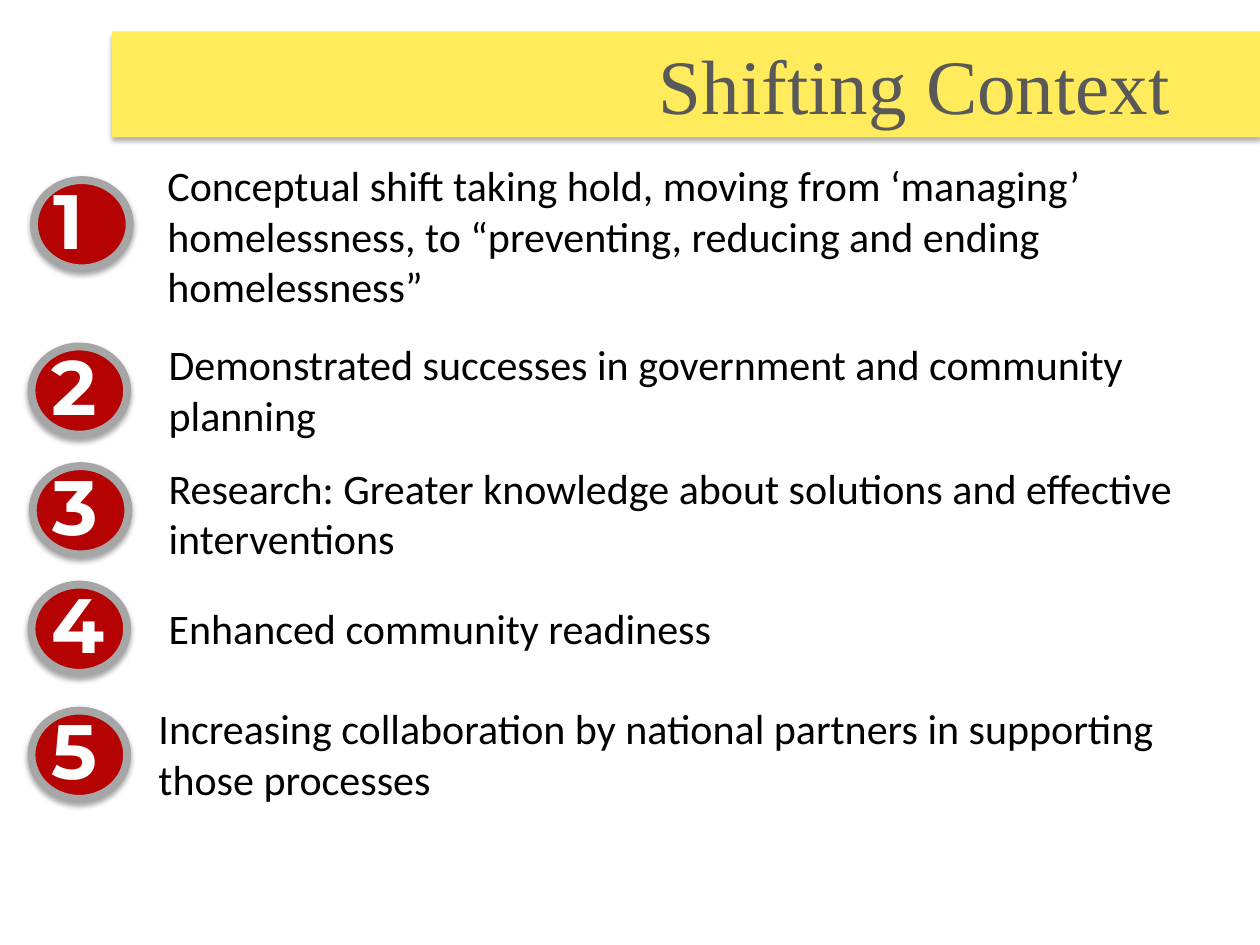
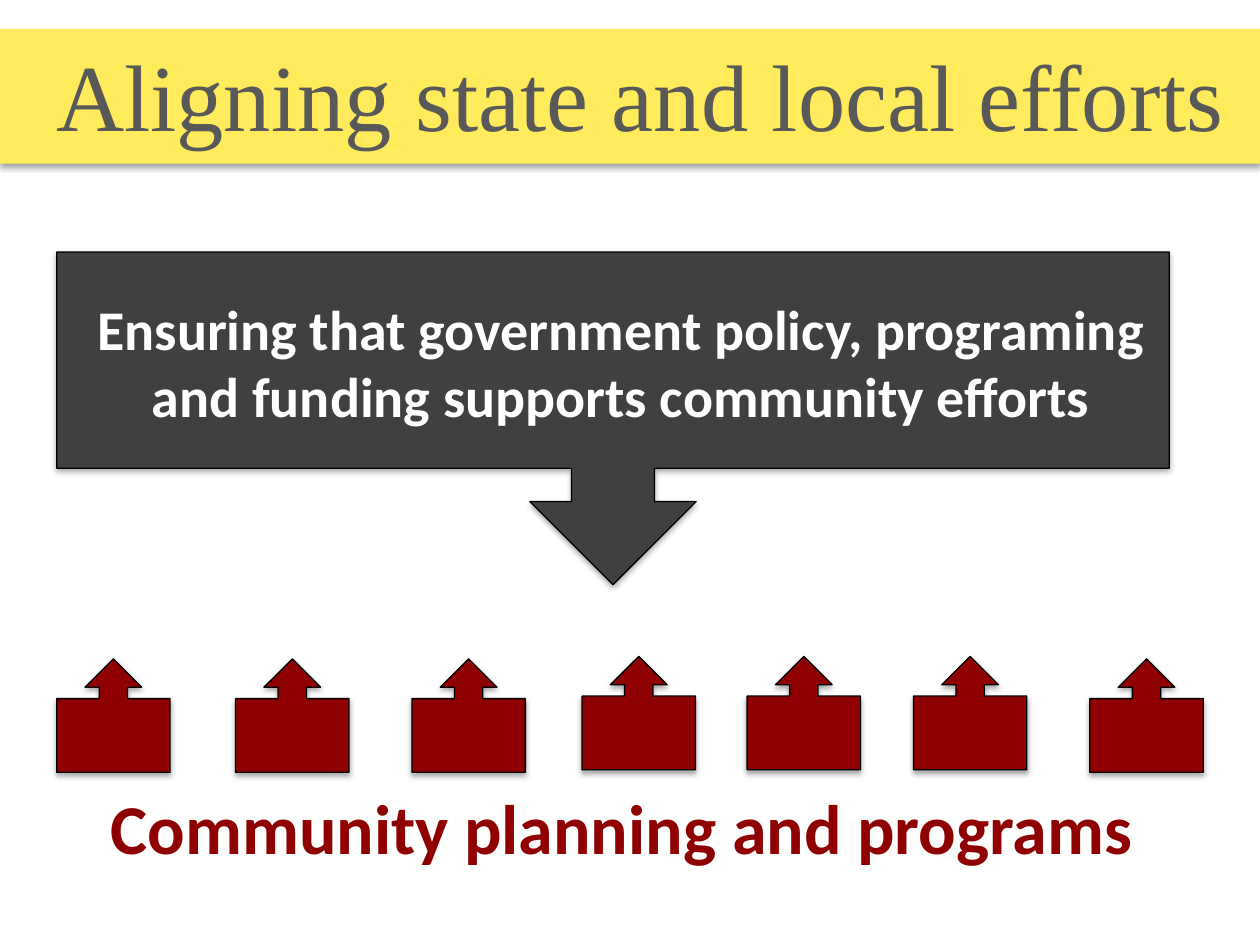
"""Build two slides on homelessness planning: a numbered list and a callout diagram."""
from lxml.etree import SubElement
from pptx import Presentation
from pptx.dml.color import RGBColor
from pptx.enum.shapes import MSO_SHAPE as SHAPE
from pptx.enum.text import MSO_ANCHOR as ANCHOR, MSO_AUTO_SIZE as FIT, PP_ALIGN as ALIGN
from pptx.oxml.ns import qn
from pptx.util import Emu, Inches, Pt

THEME = {
    "band": "FFEB5B", "badge": "B50202", "ring": "A6A6A6", "local": "8F0000",
    "policy": "404040", "outline": "000000",
    "title": {"name": "Times New Roman", "size": 44, "color": "595959", "bold": False},
    "wide_title": {"name": "Times New Roman", "size": 54, "color": "595959", "bold": False},
    "body": {"name": "Calibri", "size": 24, "color": "000000", "bold": False},
    "number": {"name": "Montserrat", "size": 44, "color": "FFFFFF", "bold": True},
    "policy_text": {"name": "Calibri", "size": 32, "color": "FFFFFF", "bold": True},
    "caption": {"name": "Calibri", "size": 40, "color": "8F0000", "bold": True},
}
SHADOW = {"blurRad": 40000, "dist": 23000, "dir": 5400000, "rotWithShape": 0}

SHIFTS = [
    ("Conceptual shift taking hold, moving from ‘managing’ homelessness, "
     "to “preventing, reducing and ending homelessness”", (0.27, 1.43), (1.23, 1.22, 8.38, 1.31)),
    ("Demonstrated successes in government and community planning",
     (0.25, 2.75), (1.24, 2.64, 8.36, 1.31)),
    ("Research: Greater knowledge about solutions and effective interventions",
     (0.26, 3.7), (1.24, 3.62, 8.36, 0.91)),
    ("Enhanced community readiness", (0.25, 4.64), (1.24, 4.73, 4.56, 0.91)),
    ("Increasing collaboration by national partners in supporting those processes",
     (0.25, 5.64), (1.16, 5.53, 8.44, 0.91)),
]
BADGE_W, BADGE_H = 0.76, 0.7
NUMBER_DX, NUMBER_DY, NUMBER_W, NUMBER_H = 0.06, -0.11, 0.62, 0.84

POLICY = "Ensuring that government policy, programing and funding supports community efforts"
PROGRAM_LEFTS = [0.45, 1.87, 3.27, 4.62, 5.93, 7.25, 8.65]
PROGRAM_TOP, PROGRAM_SIZE, MIDDLE_LIFT = 5.23, 0.9, 0.02
MIDDLE = range(3, 6)


def box(at):
    """Turn a box in inches into lengths."""
    return [Inches(v) for v in at]


def add_block(s, kind, at, fill, line=None, weight=0.75):
    """Add a filled shape with the shared soft shadow."""
    sp = s.shapes.add_shape(kind, *box(at))
    sp.fill.solid()
    sp.fill.fore_color.rgb = RGBColor.from_string(fill)
    if line:
        sp.line.color.rgb = RGBColor.from_string(line)
        sp.line.width = Pt(weight)
    else:
        sp.line.fill.background()
    sp.shadow.inherit = False
    effects = sp.element.spPr.find(qn("a:effectLst"))
    shadow = SubElement(effects, qn("a:outerShdw"), {k: str(v) for k, v in SHADOW.items()})
    color = SubElement(shadow, qn("a:srgbClr"), val="000000")
    SubElement(color, qn("a:alpha"), val="35000")
    return sp


def write(sp, text, style, align=ALIGN.LEFT):
    """Write one styled paragraph into a shape."""
    tf = sp.text_frame
    frame = {"word_wrap": True, "auto_size": FIT.NONE, "vertical_anchor": ANCHOR.TOP}
    for key, value in frame.items():
        setattr(tf, key, value)
    p = tf.paragraphs[0]
    p.alignment = align
    r = p.add_run()
    r.text = text
    look = THEME[style]
    for key, value in {"name": look["name"], "size": Pt(look["size"]), "bold": look["bold"]}.items():
        setattr(r.font, key, value)
    r.font.color.rgb = RGBColor.from_string(look["color"])


def add_text(s, text, at, style, align=ALIGN.LEFT):
    """Add a text box."""
    write(s.shapes.add_textbox(*box(at)), text, style, align)


def add_titled_slide(prs, title, band_at, title_at, style, align):
    """Add a slide with its title over a yellow band."""
    s = prs.slides.add_slide(prs.slide_layouts[5])
    band = add_block(s, SHAPE.RECTANGLE, band_at, THEME["band"])
    sp = s.shapes.title
    band.element.addnext(sp.element)
    for key, value in zip(("left", "top", "width", "height"), box(title_at)):
        setattr(sp, key, Emu(value))
    write(sp, title, style, align)
    return s


def build_context(prs):
    """Build the numbered list of shifts."""
    s = add_titled_slide(prs, "Shifting Context", (0.89, 0.25, 9.11, 0.84),
                         (5.13, 0.25, 4.3, 0.84), "title", ALIGN.LEFT)
    for number, (text, (left, top), text_at) in enumerate(SHIFTS, 1):
        add_text(s, text, text_at, "body")
        add_block(s, SHAPE.OVAL, (left, top, BADGE_W, BADGE_H),
                  THEME["badge"], THEME["ring"], 4.5)
        add_text(s, str(number), (left + NUMBER_DX, top + NUMBER_DY, NUMBER_W, NUMBER_H), "number")


def build_alignment(prs):
    """Build the policy callout facing the row of community programs."""
    s = add_titled_slide(prs, "Aligning state and local efforts", (0, 0.23, 10, 1.07),
                         (-1.48, 0.24, 11.3, 1.01), "wide_title", ALIGN.RIGHT)
    add_text(s, "Community planning and programs", (0.78, 6.18, 8.42, 0.77), "caption")
    for i, left in enumerate(PROGRAM_LEFTS):
        top = PROGRAM_TOP - MIDDLE_LIFT * (i in MIDDLE)
        add_block(s, SHAPE.UP_ARROW_CALLOUT, (left, top, PROGRAM_SIZE, PROGRAM_SIZE),
                  THEME["local"], THEME["outline"])
    policy = add_block(s, SHAPE.UP_ARROW_CALLOUT, (0.45, 2, 8.83, 2.64),
                       THEME["policy"], THEME["outline"])
    policy.rotation = 180
    add_text(s, POLICY, (0.45, 2.29, 8.96, 1.18), "policy_text", ALIGN.CENTER)


def main():
    """Create and save the presentation."""
    prs = Presentation()
    prs.slide_width, prs.slide_height = Inches(10), Inches(7.5)
    build_context(prs)
    build_alignment(prs)
    prs.save("out.pptx")


if __name__ == "__main__":
    main()
